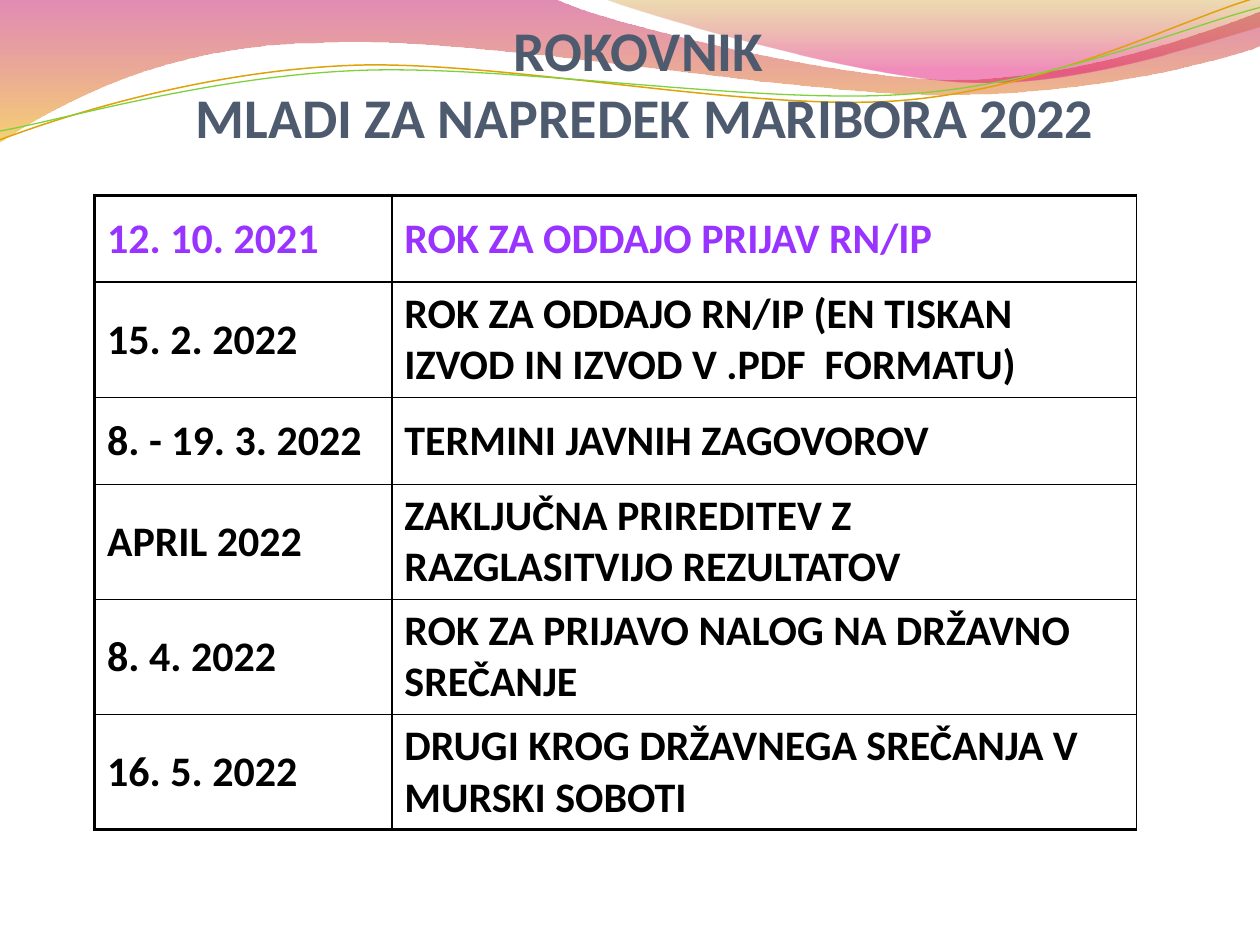
from dataclasses import dataclass
from math import cos, radians, sin

from lxml import etree
from pptx import Presentation
from pptx.dml.color import RGBColor
from pptx.enum.text import MSO_ANCHOR, PP_ALIGN
from pptx.oxml.ns import qn
from pptx.util import Inches, Pt

MIDDLE = MSO_ANCHOR.MIDDLE
CENTER = PP_ALIGN.CENTER


@dataclass(frozen=True)
class Theme:
    font: str = "Calibri"
    title: str = "4E5B6F"
    body: str = "000000"
    accent: str = "9933FF"
    border: str = "000000"
    gold: str = "E0A209"
    green: str = "7FD13B"
    # Gradient stops: position, colour, opacity in percent
    wide: tuple = ((0, "BD0059", 45), (100, "F0AB00", 55))
    small: tuple = ((0, "C38B00", 30), (80, "E1006B", 45))
    title_size: int = 32
    body_size: int = 24
    thin: float = 1
    thick: float = 2.25


THEME = Theme()

# Each outline is a start point, then steps: (x, y) for a line,
# (x1, y1, x2, y2, x, y) for a cubic curve.
WIDE_WAVE = [
    (0, -0.01), (4.4, -0.01),
    (4.76, 0.17, 6.64, 0.63, 7.58, 0.63),
    (8.53, 0.63, 9.58, 0.26, 10, 0.09),
    (10.01, 0.36),
    (9.83, 0.44, 8.7, 0.76, 7.46, 0.75),
    (6.22, 0.75, 3.82, 0.28, 2.57, 0.34),
    (1.29, 0.35, 0.46, 0.83, -0.01, 1.13),
    (0, -0.01),
]
SMALL_WAVE = [
    (4.79, -0.01),
    (5.09, 0.11, 6.82, 0.62, 7.69, 0.65),
    (8.56, 0.69, 9.61, 0.32, 10, 0.21),
    (10, 0),
    (4.79, -0.01),
]
GOLD_LINE = [
    (0, 1.11),
    (0.48, 0.93, 1.58, 0.57, 2.77, 0.52),
    (3.95, 0.47, 5.93, 0.89, 7.13, 0.8),
    (8.33, 0.71, 9.38, 0.15, 9.98, -0.02),
]
GREEN_LINE = [
    (0, 1.04),
    (0.47, 0.96, 1.64, 0.61, 2.83, 0.56),
    (4.03, 0.51, 5.97, 0.83, 7.17, 0.75),
    (8.36, 0.67, 9.41, 0.21, 10, 0.06),
]
TILT = -2.7
PIVOT = (5, 0.58)

TITLE = ["ROKOVNIK ", "MLADI ZA NAPREDEK MARIBORA 2022"]
DATES = [
    ("12. 10. 2021", "ROK ZA ODDAJO PRIJAV RN/IP"),
    ("15. 2. 2022",
     "ROK ZA ODDAJO RN/IP (EN TISKAN IZVOD IN IZVOD V .PDF  FORMATU)"),
    ("8. - 19. 3. 2022", "TERMINI JAVNIH ZAGOVOROV"),
    ("APRIL 2022", "ZAKLJUČNA PRIREDITEV Z RAZGLASITVIJO REZULTATOV"),
    ("8. 4. 2022", "ROK ZA PRIJAVO NALOG NA DRŽAVNO SREČANJE"),
    ("16. 5. 2022", "DRUGI KROG DRŽAVNEGA SREČANJA V MURSKI SOBOTI"),
]
COLS = (2.36, 5.91)
ROW = 0.69


def turn(point, angle):
    """Turn a point clockwise about the pivot."""
    a = radians(angle)
    x, y = (p - q for p, q in zip(point, PIVOT))
    return (PIVOT[0] + x * cos(a) - y * sin(a),
            PIVOT[1] + x * sin(a) + y * cos(a))


def add_path(shapes, steps, close, tilt=0):
    """Lay all points as lines, then merge each three into one curve."""
    points = [turn(step[i:i + 2], -tilt)
              for step in steps for i in range(0, len(step), 2)]
    points = [(Inches(x), Inches(y)) for x, y in points]
    build = shapes.build_freeform(*points[0])
    build.add_line_segments(points[1:], close=close)
    shape = build.convert_to_shape()
    shape.shadow.inherit = False
    shape.rotation = tilt
    lines = shape.element.spPr.iter(qn("a:lnTo"))
    lines = iter(list(lines))
    for step in steps[1:]:
        line = next(lines)
        if len(step) == 6:
            curve = etree.Element(qn("a:cubicBezTo"))
            line.addprevious(curve)
            for part in (line, next(lines), next(lines)):
                curve.append(part[0])
                part.getparent().remove(part)
    return shape


def add_wave(shapes, steps, stops):
    shape = add_path(shapes, steps, True)
    shape.line.fill.background()
    fill = shape.fill
    fill.gradient()
    fill.gradient_angle = 270
    for stop, (place, color, alpha) in zip(fill.gradient_stops, stops):
        stop.position = place / 100
        stop.color.rgb = RGBColor.from_string(color)
    tags = shape.element.spPr.iter(qn("a:srgbClr"))
    for tag, (place, color, alpha) in zip(tags, stops):
        etree.SubElement(tag, qn("a:alpha"), val=str(alpha * 1000))


def add_curve(shapes, steps, color, width):
    shape = add_path(shapes, steps, False, TILT)
    shape.fill.background()
    shape.line.color.rgb = RGBColor.from_string(color)
    shape.line.width = Pt(width)


def style(para, size, color):
    for run in para.runs:
        font = run.font
        font.name = THEME.font
        font.size = Pt(size)
        font.bold = True
        font.color.rgb = RGBColor.from_string(color)


def add_title(slide):
    box = slide.shapes.add_textbox(
        Inches(0.67), Inches(0.44), Inches(8.9), Inches(0.43))
    frame = box.text_frame
    frame.word_wrap = True
    frame.vertical_anchor = MIDDLE
    frame.text = "\n".join(TITLE)
    for para in frame.paragraphs:
        para.alignment = CENTER
        style(para, THEME.title_size, THEME.title)


def set_border(cell, widths):
    """Draw the left, right, top and bottom sides, in that order."""
    props = cell._tc.get_or_add_tcPr()
    for i, (side, width) in enumerate(zip("LRTB", widths)):
        line = etree.Element(qn("a:ln" + side), w=str(Pt(width)))
        fill = etree.SubElement(line, qn("a:solidFill"))
        etree.SubElement(fill, qn("a:srgbClr"), val=THEME.border)
        props.insert(i, line)


def add_dates(slide):
    table = slide.shapes.add_table(
        len(DATES), len(COLS), Inches(0.75), Inches(1.55),
        Inches(sum(COLS)), Inches(ROW * len(DATES))).table
    table.first_row = table.horz_banding = False
    for col, width in zip(table.columns, COLS):
        col.width = Inches(width)
    last = len(DATES) - 1
    for r, texts in enumerate(DATES):
        table.rows[r].height = Inches(ROW)
        for c, text in enumerate(texts):
            cell = table.cell(r, c)
            cell.text_frame.text = text
            cell.vertical_anchor = MIDDLE
            cell.fill.background()
            color = THEME.accent if r == 0 else THEME.body
            style(cell.text_frame.paragraphs[0], THEME.body_size, color)
            heavy = (c == 0, False, r == 0, r == last)
            set_border(cell, [THEME.thick if h else THEME.thin for h in heavy])


def main():
    deck = Presentation()
    deck.slide_width, deck.slide_height = Inches(10), Inches(7.5)
    slide = deck.slides.add_slide(deck.slide_layouts[6])
    add_wave(slide.shapes, WIDE_WAVE, THEME.wide)
    add_wave(slide.shapes, SMALL_WAVE, THEME.small)
    pair = slide.shapes.add_group_shape().shapes
    add_curve(pair, GOLD_LINE, THEME.gold, 0.85)
    add_curve(pair, GREEN_LINE, THEME.green, 0.75)
    add_dates(slide)
    add_title(slide)
    deck.save("out.pptx")


if __name__ == "__main__":
    main()
